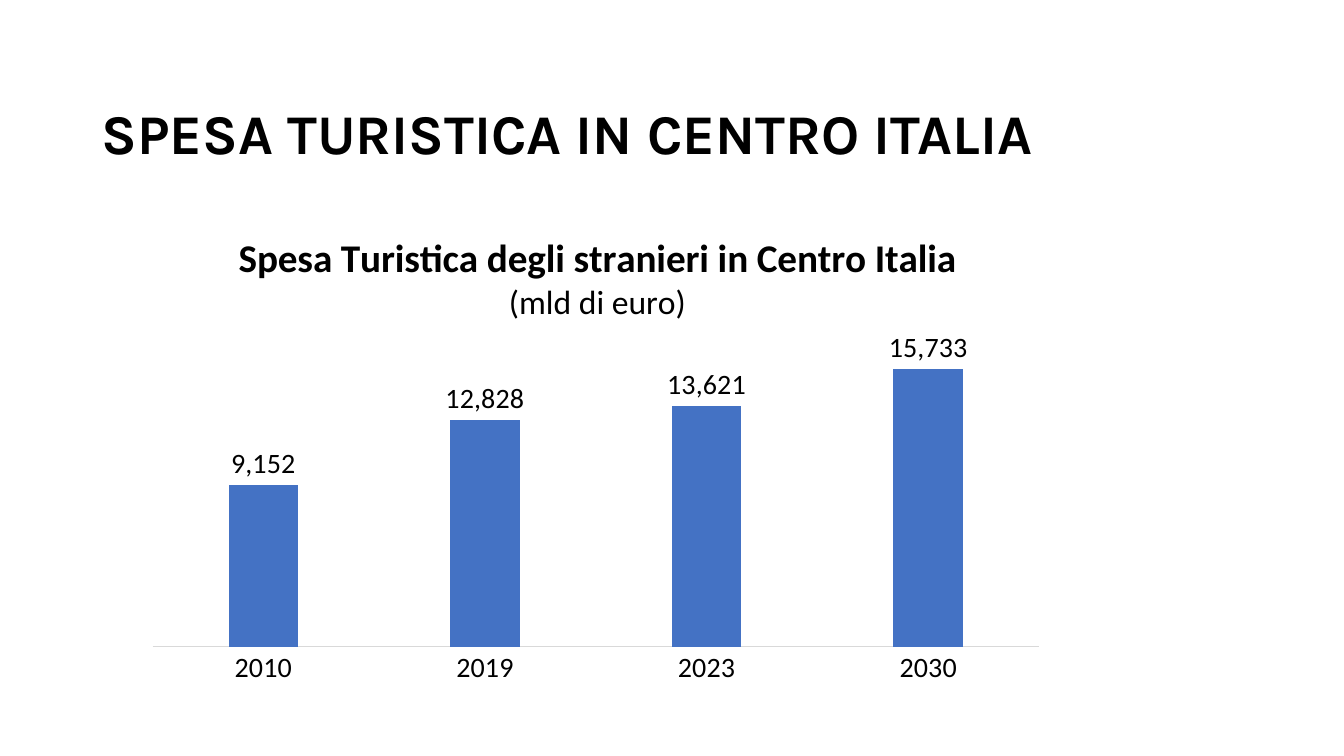
"""Build a slide with a column chart of tourist spending in central Italy."""
from dataclasses import dataclass

from lxml import etree
from pptx import Presentation
from pptx import util as u
from pptx.chart.data import CategoryChartData
from pptx.dml.color import RGBColor
from pptx.enum import chart as charts, text
from pptx.oxml import parse_xml
from pptx.oxml.ns import nsdecls


@dataclass
class Theme:
    ink: RGBColor = RGBColor(0, 0, 0)
    bar: RGBColor = RGBColor(0x44, 0x72, 0xC4)
    axis: RGBColor = RGBColor(0xD9, 0xD9, 0xD9)
    heading_font: str = "Karla"
    chart_font: str = "Calibri"
    heading: int = 40
    chart_title: int = 28
    unit: int = 24
    label: int = 20


theme = Theme()


def style(font, name, size, bold=False):
    font.name, font.size, font.bold = name, u.Pt(size), bold
    font.color.rgb = theme.ink


def place(parent, index, target, **shares):
    layout = parent.find("{*}layout")
    if layout is not None:
        parent.remove(layout)
    inner = f'<c:layoutTarget val="{target}"/>' if target else ""
    inner += "".join(f'<c:{side}Mode val="edge"/>' for side in "xy")
    inner += "".join(f'<c:{side} val="{share}"/>' for side, share in shares.items())
    parent.insert(index, parse_xml(
        f'<c:layout {nsdecls("c")}><c:manualLayout>{inner}</c:manualLayout></c:layout>'))


deck = Presentation()
deck.slide_width, deck.slide_height = u.Inches(13.33), u.Inches(7.5)
page = deck.slides.add_slide(deck.slide_layouts[5])

heading = page.shapes.title
heading.left, heading.top = u.Inches(0.91), u.Inches(1.04)
heading.width, heading.height = u.Inches(11.5), u.Inches(2.03)
frame = heading.text_frame
frame.text = "SPESA TURISTICA IN CENTRO ITALIA"
frame.word_wrap = True
frame.vertical_anchor = text.MSO_ANCHOR.TOP
frame.auto_size = text.MSO_AUTO_SIZE.NONE
para = frame.paragraphs[0]
para.alignment = text.PP_ALIGN.LEFT
para.line_spacing = u.Pt(theme.heading)
style(para.runs[0].font, theme.heading_font, theme.heading, True)

spending = CategoryChartData(number_format="#,##0")
spending.categories = ["2010", "2019", "2023", "2030"]
spending.add_series("Series 1", [9152, 12828, 13621, 15733])
chart = page.shapes.add_chart(
    charts.XL_CHART_TYPE.COLUMN_CLUSTERED, u.Inches(1.33), u.Inches(2.05),
    u.Inches(9.16), u.Inches(4.85), spending).chart
style(chart.font, theme.chart_font, theme.label)
chart.has_legend = False

title_frame = chart.chart_title.text_frame
title_frame.text = "Spesa Turistica degli stranieri in Centro Italia\n(mld di euro)"
for para, size, bold in zip(title_frame.paragraphs,
                            (theme.chart_title, theme.unit), (True, False)):
    style(para.font, theme.chart_font, size, bold)
    style(para.runs[0].font, theme.chart_font, size, bold)
chart.chart_title.include_in_layout = False

years = chart.category_axis
years.major_tick_mark = charts.XL_TICK_MARK.NONE
years.format.line.color.rgb = theme.axis
years.format.line.width = u.Pt(0.75)
style(years.tick_labels.font, theme.chart_font, theme.label)

amounts = chart.value_axis
amounts.minimum_scale, amounts.maximum_scale = 0, 18000
amounts.has_major_gridlines = False
amounts.visible = False

plot = chart.plots[0]
plot.gap_width, plot.overlap = 219, -27
plot.vary_by_categories = False
plot.has_data_labels = True
labels = plot.data_labels
labels.show_value = True
labels.number_format, labels.number_format_is_linked = "#,##0", False
labels.position = charts.XL_LABEL_POSITION.OUTSIDE_END
style(labels.font, theme.chart_font, theme.label)
bars = plot.series[0]
bars.format.fill.solid()
bars.format.fill.fore_color.rgb = theme.bar

chart_space = chart.element
place(chart_space.find(".//{*}plotArea"), 0, "inner", x=0.02, y=0.25, w=0.96, h=0.65)
place(chart_space.find("{*}chart/{*}title"), 1, None, x=0.11, y=0.05)

deck.save("out.pptx")
